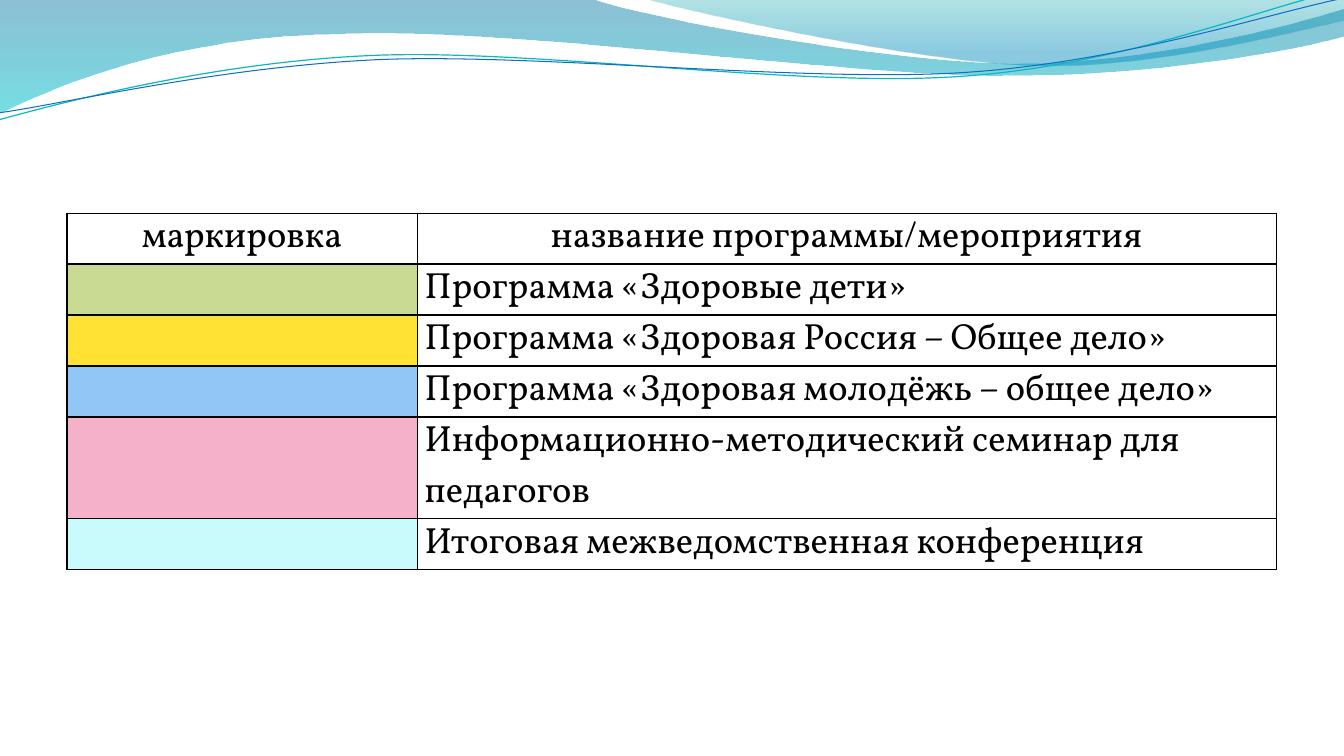
import lxml.etree
import pptx
import pptx.dml.color
import pptx.enum.text
import pptx.oxml
import pptx.oxml.ns
import pptx.util

Cm = pptx.util.Cm
Pt = pptx.util.Pt
qn = pptx.oxml.ns.qn

COLORS = {
    "text": "000000", "border": "000000",
    "deep": "0074A1", "aqua": "00C6CF", "teal": "00A1A9", "sky": "008BBF",
    "teal_line": "0AB8BF", "blue_line": "0F6FC6",
    "green": "C9DA92", "yellow": "FFE233", "blue": "91C6F7",
    "pink": "F5B1C9", "ice": "C9FAFC",
}

WIDE_WAVE = [
    (0, 0), (14.91, -0.03),
    (16.1, 0.43, 22.48, 1.6, 25.68, 1.6), (28.88, 1.6, 32.46, 0.66, 33.86, 0.23),
    (33.91, 0.91), (33.3, 1.12, 29.46, 1.93, 25.25, 1.91),
    (21.06, 1.91, 12.93, 0.71, 8.71, 0.86), (4.37, 0.91, 1.55, 2.11, -0.03, 2.87),
]
RIGHT_WAVE = [
    (16.23, -0.03), (17.25, 0.28, 23.09, 1.57, 26.04, 1.65),
    (28.98, 1.75, 32.56, 0.81, 33.86, 0.53), (33.86, 0),
]
TEAL_CURVE = [
    (-0.03, 3.02), (1.63, 2.57, 5.36, 1.57, 9.37, 1.4),
    (13.39, 1.22, 20.07, 2.21, 24.13, 1.93), (28.19, 1.68, 31.8, 0.2, 33.81, -0.25),
]
BLUE_CURVE = [
    (0, 2.84), (1.6, 2.62, 5.54, 1.68, 9.6, 1.5),
    (13.64, 1.35, 20.22, 2.08, 24.26, 1.83), (28.32, 1.57, 31.88, 0.36, 33.88, -0.05),
]

HEADINGS = ("маркировка", "название программы/мероприятия")
PROGRAMS = [
    ("green", "Программа «Здоровые дети»"),
    ("yellow", "Программа «Здоровая Россия – Общее дело»"),
    ("blue", "Программа «Здоровая молодёжь – общее дело»"),
    ("pink", "Информационно-методический семинар для педагогов"),
    ("ice", "Итоговая межведомственная конференция"),
]


def rgb(name):
    return pptx.dml.color.RGBColor.from_string(COLORS[name])


def write_text(frame, text, font="Vollkorn", size=26, color="text", align="LEFT"):
    paragraph = frame.paragraphs[0]
    paragraph.alignment = pptx.enum.text.PP_ALIGN[align]
    run = paragraph.add_run()
    run.text = text
    run.font.name = font
    run.font.size = Pt(size)
    run.font.color.rgb = rgb(color)


class WaveSlide:
    def __init__(self, slide):
        self.slide = slide
        self.border_width = Pt(1)
        self.cell_inset = Cm(0.18)

    def outline(self, segments, closed):
        anchors = [(Cm(segment[-2]), Cm(segment[-1])) for segment in segments]
        builder = self.slide.shapes.build_freeform(*anchors[0])
        builder.add_line_segments(anchors[1:], close=closed)
        ribbon = builder.convert_to_shape()
        ribbon.shadow.inherit = False
        sides = list(ribbon._element.spPr.iter(qn("a:lnTo")))
        for side, segment in zip(sides, segments[1:]):
            if len(segment) == 6:
                side.getparent().replace(side, self.bend(ribbon, segment))
        return ribbon

    def bend(self, ribbon, segment):
        bezier = pptx.oxml.parse_xml(f'<a:cubicBezTo {pptx.oxml.ns.nsdecls("a")}/>')
        for x, y in zip(segment[::2], segment[1::2]):
            lxml.etree.SubElement(bezier, qn("a:pt"), x=str(Cm(x) - ribbon.left),
                                  y=str(Cm(y) - ribbon.top))
        return bezier

    def wave(self, segments, stops):
        band = self.outline(segments, True)
        band.line.fill.background()
        band.fill.gradient()
        band.fill.gradient_angle = 270
        for stop, (position, color, opacity) in zip(band.fill.gradient_stops, stops):
            stop.position = position
            stop.color.rgb = rgb(color)
        tints = band._element.spPr.iter(qn("a:srgbClr"))
        for tint, (position, color, opacity) in zip(tints, stops):
            lxml.etree.SubElement(tint, qn("a:alpha"), val=str(opacity * 1000))

    def curve(self, segments, color, width):
        strand = self.outline(segments, False)
        strand.fill.background()
        strand.line.color.rgb = rgb(color)
        strand.line.width = Pt(width)

    def cell(self, cell, text=None, fill=None, align="LEFT"):
        cell.margin_left = cell.margin_right = self.cell_inset
        cell.margin_top = cell.margin_bottom = 0
        if fill:
            cell.fill.solid()
            cell.fill.fore_color.rgb = rgb(fill)
        else:
            cell.fill.background()
        if text:
            write_text(cell.text_frame, text, align=align)
        properties = cell._tc.get_or_add_tcPr()
        for index, side in enumerate(("lnL", "lnR", "lnT", "lnB")):
            properties.insert(index, self.edge(side))

    def edge(self, side):
        return pptx.oxml.parse_xml(
            f'<a:{side} {pptx.oxml.ns.nsdecls("a")} w="{self.border_width}">'
            f'<a:solidFill><a:srgbClr val="{COLORS["border"]}"/></a:solidFill></a:{side}>')

    def legend(self, left, top, widths, row_height, headings, programs):
        rows = len(programs) + 1
        legend = self.slide.shapes.add_table(
            rows, len(widths), Cm(left), Cm(top),
            Cm(sum(widths)), Cm(row_height * rows)).table
        legend.horz_banding = False
        legend.first_row = False
        for column, width in zip(legend.columns, widths):
            column.width = Cm(width)
        for column, heading in enumerate(headings):
            self.cell(legend.cell(0, column), heading, align="CENTER")
        for row, (marking, program) in enumerate(programs, 1):
            self.cell(legend.cell(row, 0), fill=marking)
            self.cell(legend.cell(row, 1), program)


def main():
    deck = pptx.Presentation()
    deck.slide_width = Cm(33.87)
    deck.slide_height = Cm(19.05)
    page = WaveSlide(deck.slides.add_slide(deck.slide_layouts[6]))
    page.wave(WIDE_WAVE, [(0, "deep", 45), (1, "aqua", 55)])
    page.wave(RIGHT_WAVE, [(0, "teal", 30), (0.8, "sky", 45)])
    page.curve(TEAL_CURVE, "teal_line", 0.85)
    page.curve(BLUE_CURVE, "blue_line", 0.75)
    page.legend(1.69, 5.37, (8.83, 21.64), 1.04, HEADINGS, PROGRAMS)
    deck.save("out.pptx")


if __name__ == "__main__":
    main()
